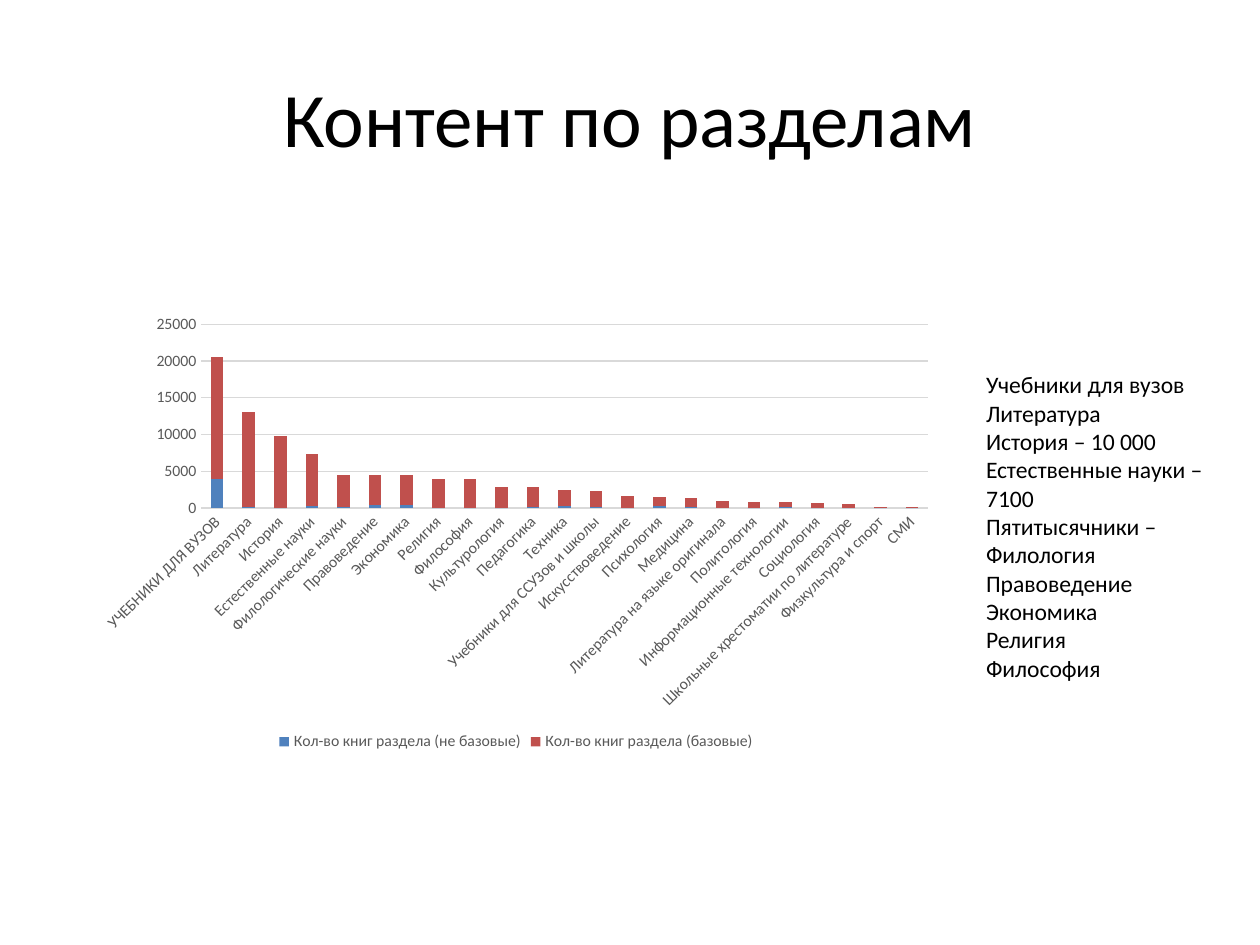
from pptx import Presentation
from pptx.chart.data import CategoryChartData as ChartData
from pptx.dml.color import RGBColor
from pptx.enum.chart import XL_CHART_TYPE as ChartType, XL_LEGEND_POSITION as LegendPosition, XL_TICK_MARK as TickMark
from pptx.enum.text import MSO_ANCHOR as Anchor, PP_ALIGN as Align
from pptx.util import Cm, Pt


def color(value):
    return RGBColor.from_string(value)


def add_text(page, place, lines, size, align, anchor):
    box = page.shapes.add_textbox(*[Cm(length) for length in place])
    frame = box.text_frame
    frame.word_wrap = True
    frame.vertical_anchor = anchor
    for index, line in enumerate(lines):
        para = frame.add_paragraph() if index else frame.paragraphs[0]
        para.alignment = align
        span = para.add_run()
        span.text = line
        span.font.name = "Calibri"
        span.font.size = Pt(size)
        span.font.color.rgb = color("000000")


deck = Presentation()
deck.slide_width, deck.slide_height = Cm(25.4), Cm(19.05)
page = deck.slides.add_slide(deck.slide_layouts[6])

add_text(page, (1.27, 0.76, 22.86, 3.18), ["Контент по разделам"], 44, Align.CENTER, Anchor.MIDDLE)

sections = [
    ("УЧЕБНИКИ ДЛЯ ВУЗОВ", 3900, 16600),
    ("Литература", 100, 12900),
    ("История", 0, 9800),
    ("Естественные науки", 300, 7100),
    ("Филологические науки", 200, 4300),
    ("Правоведение", 400, 4100),
    ("Экономика", 400, 4100),
    ("Религия", 0, 4000),
    ("Философия", 0, 3900),
    ("Культурология", 0, 2800),
    ("Педагогика", 200, 2600),
    ("Техника", 300, 2200),
    ("Учебники для ССУЗов и школы", 100, 2200),
    ("Искусствоведение", 0, 1600),
    ("Психология", 300, 1200),
    ("Медицина", 200, 1200),
    ("Литература на языке оригинала", None, 1000),
    ("Политология", 0, 800),
    ("Информационные технологии", 100, 700),
    ("Социология", 0, 700),
    ("Школьные хрестоматии по литературе", 0, 500),
    ("Физкультура и спорт", 0, 200),
    ("СМИ", 0, 100),
]
names, extra_books, base_books = zip(*sections)
data = ChartData()
data.categories = names
data.add_series("Кол-во книг раздела (не базовые)", extra_books)
data.add_series("Кол-во книг раздела (базовые)", base_books)

chart = page.shapes.add_chart(
    ChartType.COLUMN_STACKED, Cm(1.75), Cm(6.17), Cm(17.3), Cm(9.07), data
).chart
chart.has_title = False
chart.font.name = "Calibri"
chart.font.size = Pt(10)
chart.font.color.rgb = color("000000")

plot = chart.plots[0]
plot.gap_width = 150
plot.overlap = 100
plot.vary_by_categories = False
for series, fill in zip(plot.series, ("4F81BD", "C0504D")):
    series.format.fill.solid()
    series.format.fill.fore_color.rgb = color(fill)
    series.invert_if_negative = False

chart.has_legend = True
chart.legend.position = LegendPosition.BOTTOM
chart.legend.include_in_layout = False
section_axis, count_axis = chart.category_axis, chart.value_axis
for part in (section_axis.tick_labels, count_axis.tick_labels, chart.legend):
    part.font.name = "Calibri"
    part.font.size = Pt(9)
    part.font.color.rgb = color("595959")
for axis in (section_axis, count_axis):
    axis.major_tick_mark = axis.minor_tick_mark = TickMark.NONE

count_axis.has_major_gridlines = True
for line in (section_axis.format.line, count_axis.major_gridlines.format.line):
    line.color.rgb = color("D9D9D9")
    line.width = Pt(0.75)
count_axis.format.line.fill.background()
section_axis._element.txPr.bodyPr.set("rot", "-2700000")

highlights = [
    "Учебники для вузов",
    "Литература",
    "История – 10 000",
    "Естественные науки – 7100",
    "Пятитысячники –",
    "Филология",
    "Правоведение",
    "Экономика",
    "Религия",
    "Философия",
]
add_text(page, (19.63, 7.34, 5.18, 7.19), highlights, 13.5, Align.LEFT, Anchor.TOP)

deck.save("out.pptx")
